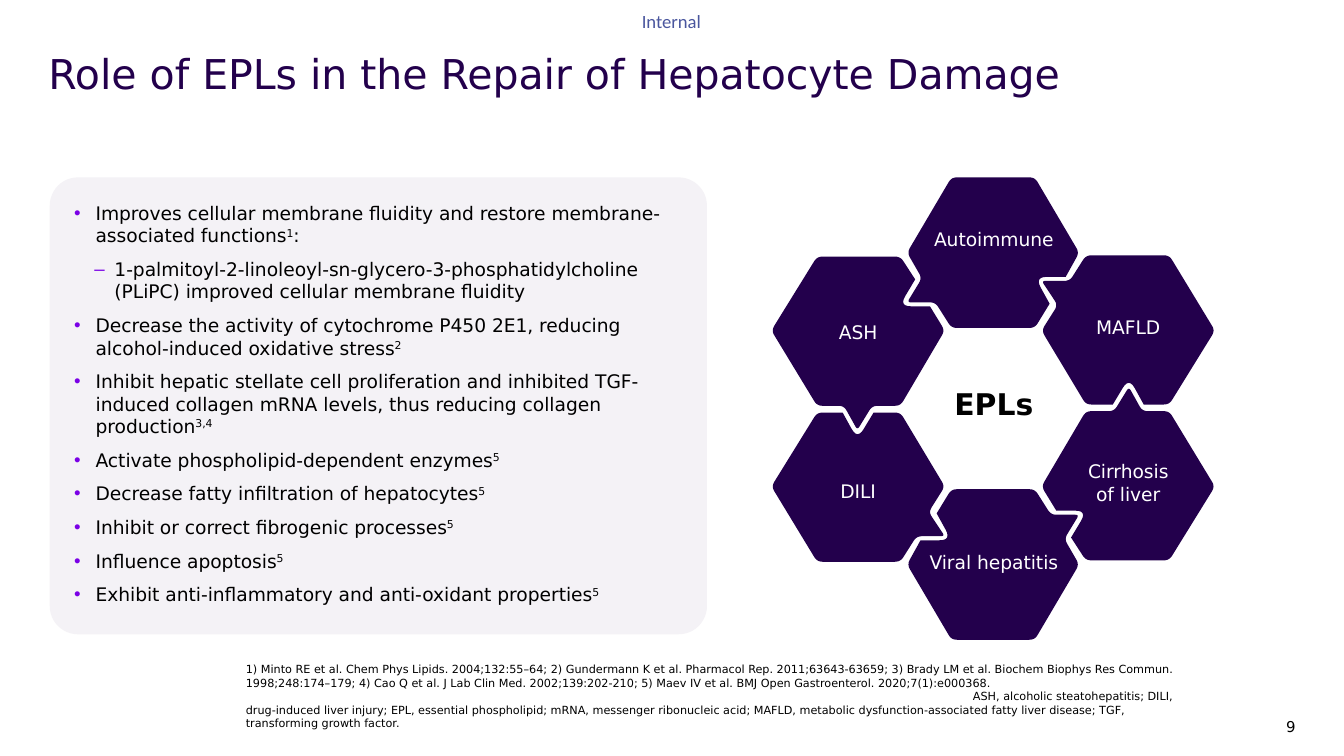
from lxml import etree
from pptx import Presentation
from pptx.dml.color import RGBColor
from pptx.enum.text import MSO_ANCHOR, MSO_AUTO_SIZE, PP_ALIGN
from pptx.oxml.ns import qn
from pptx.util import Pt

PX = 9144  # 100 px to the inch
SLIDE_WIDTH = 1000 * PX
SLIDE_HEIGHT = SLIDE_WIDTH * 9 // 16
TOP, MIDDLE, BOTTOM = MSO_ANCHOR.TOP, MSO_ANCHOR.MIDDLE, MSO_ANCHOR.BOTTOM
LEFT, CENTER, RIGHT = PP_ALIGN.LEFT, PP_ALIGN.CENTER, PP_ALIGN.RIGHT

THEME = {
    "font": "DejaVu Sans", "marking_font": "Calibri",
    "purple": "23004C", "panel": "F4F2F6", "bullet": "7A00E6",
    "black": "000000", "white": "FFFFFF", "marking": "4A569E",
    "title_size": 22, "hub_size": 16, "body_size": 10, "number_size": 8, "note_size": 6,
}

TITLE = "Role of EPLs in the Repair of Hepatocyte Damage"
MARKING = "Internal"
PAGE_NUMBER = "9"
HUB = "EPLs"

# level, text, reference mark, text after the mark
EFFECTS = [
    (0, "Improves cellular membrane fluidity and restore membrane-associated functions", "1", ":"),
    (1, "1-palmitoyl-2-linoleoyl-sn-glycero-3-phosphatidylcholine (PLiPC) improved cellular "
        "membrane fluidity", "", ""),
    (0, "Decrease the activity of cytochrome P450 2E1, reducing alcohol-induced oxidative stress",
     "2", ""),
    (0, "Inhibit hepatic stellate cell proliferation and inhibited TGF-induced collagen mRNA "
        "levels, thus reducing collagen production", "3,4", ""),
    (0, "Activate phospholipid-dependent enzymes", "5", ""),
    (0, "Decrease fatty infiltration of hepatocytes", "5", ""),
    (0, "Inhibit or correct fibrogenic processes", "5", ""),
    (0, "Influence apoptosis", "5", ""),
    (0, "Exhibit anti-inflammatory and anti-oxidant properties", "5", ""),
]
BULLETS = [("•", 16, -16), ("–", 30, -15)]  # character, margin, indent by level

# first-line indent, text
NOTES = [
    (0, "1) Minto RE et al. Chem Phys Lipids. 2004;132:55–64; 2) Gundermann K et al. Pharmacol "
        "Rep. 2011;63643-63659; 3) Brady LM et al. Biochem Biophys Res Commun. 1998;248:174–179; "
        "4) Cao Q et al. J Lab Clin Med. 2002;139:202-210; 5) Maev IV et al. BMJ Open "
        "Gastroenterol. 2020;7(1):e000368."),
    (541, "ASH, alcoholic steatohepatitis; DILI, drug-induced liver injury; EPL, essential "
          "phospholipid; mRNA, messenger ribonucleic acid; MAFLD, metabolic "
          "dysfunction-associated fatty liver disease; TGF, transforming growth factor."),
]

# Corners of three pieces: x, y, rounding; the other three are these turned half round.
TURN_X, TURN_Y = 1478, 608  # sums of opposite coordinates
PIECES = [
    [(708, 132, 4), (675, 188, 4), (686, 207, 4), (675, 225, 3), (696, 225, 4), (708, 244, 4),
     (770, 244, 4), (781, 226, 0), (770, 206, 9), (793, 206, 0), (803, 188, 4), (770, 132, 4)],
    [(608, 191, 4), (574, 246, 4), (608, 302, 4), (628, 302, 4), (638, 320, 3), (649, 302, 4),
     (670, 302, 4), (703, 246, 4), (692, 228, 0), (669, 228, 9), (681, 208, 0), (670, 191, 4)],
    [(608, 307, 4), (574, 362, 4), (608, 418, 4), (670, 418, 4), (682, 399, 4), (703, 399, 3),
     (691, 381, 4), (703, 362, 4), (670, 307, 4), (650, 307, 0), (638, 327, 9), (627, 307, 0)],
]
LABEL_WIDTH, LABEL_HEIGHT = 117, 32
LABEL_COLUMNS = (580, 681, 781)
# column, top, lines
LABELS = [
    (1, 162, ["Autoimmune"]), (0, 231, ["ASH"]), (0, 349, ["DILI"]),
    (1, 402, ["Viral hepatitis"]), (2, 343, ["Cirrhosis", "of liver"]), (2, 227, ["MAFLD"]),
]


def color(name):
    return RGBColor.from_string(THEME[name])


def place(shape, left, top, width, height):
    shape.left, shape.top, shape.width, shape.height = (
        value * PX for value in (left, top, width, height))


def prepare(frame, anchor, inset=0):
    frame.word_wrap = True
    frame.auto_size = MSO_AUTO_SIZE.NONE
    frame.vertical_anchor = anchor
    frame.margin_left = frame.margin_right = inset * PX
    frame.margin_top = frame.margin_bottom = inset * PX


def add_run(paragraph, text, size="body_size", ink="black", font="font"):
    run = paragraph.add_run()
    run.text = text
    run.font.name = THEME[font]
    run.font.size = Pt(THEME[size])
    run.font.color.rgb = color(ink)
    return run


def add_text(slide, box, lines, anchor=TOP, align=LEFT, **style):
    """Add one paragraph, with a line break between its lines."""
    shape = slide.shapes.add_textbox(*(value * PX for value in box))
    prepare(shape.text_frame, anchor)
    paragraph = shape.text_frame.paragraphs[0]
    paragraph.alignment = align
    for index, line in enumerate(lines):
        if index:
            paragraph.add_line_break()
        run = add_run(paragraph, line, **style)
    return run


def next_paragraph(frame, index):
    return frame.add_paragraph() if index else frame.paragraphs[0]


def set_bullet(paragraph, level):
    character, margin, indent = BULLETS[level]
    properties = paragraph._p.get_or_add_pPr()
    properties.set("marL", str(margin * PX))
    properties.set("indent", str(indent * PX))
    bullet_color = etree.SubElement(properties, qn("a:buClr"))
    etree.SubElement(bullet_color, qn("a:srgbClr"), val=THEME["bullet"])
    etree.SubElement(properties, qn("a:buChar"), char=character)


def fill_panel(panel):
    place(panel, 37, 132, 489, 340)
    geometry = etree.SubElement(panel.element.spPr, qn("a:prstGeom"), prst="roundRect")
    guides = etree.SubElement(geometry, qn("a:avLst"))
    etree.SubElement(guides, qn("a:gd"), name="adj", fmla="val 6200")
    panel.fill.solid()
    panel.fill.fore_color.rgb = color("panel")
    frame = panel.text_frame
    prepare(frame, TOP, 12)
    for index, (level, text, mark, tail) in enumerate(EFFECTS):
        paragraph = next_paragraph(frame, index)
        set_bullet(paragraph, level)
        paragraph.level = level
        paragraph.space_before = Pt(6 if index else 0)
        add_run(paragraph, text)
        if mark:
            add_run(paragraph, mark).font._element.set("baseline", "30000")
        if tail:
            add_run(paragraph, tail)


def toward(start, end, distance):
    dx, dy = end[0] - start[0], end[1] - start[1]
    ratio = distance / (dx * dx + dy * dy) ** 0.5
    return start[0] + dx * ratio, start[1] + dy * ratio


def round_corners(corners, steps=6):
    """Return outline points in EMU, each corner replaced by a quadratic curve."""
    points = []
    for index, (x, y, cut) in enumerate(corners):
        before = toward((x, y), corners[index - 1], cut)
        after = toward((x, y), corners[(index + 1) % len(corners)], cut)
        for step in range(steps + 1 if cut else 1):
            t = step / steps
            points.append(tuple(
                round(PX * ((1 - t) ** 2 * a + 2 * t * (1 - t) * b + t * t * c))
                for a, b, c in zip(before, (x, y), after)))
    return points


def add_piece(slide, corners):
    points = round_corners(corners)
    builder = slide.shapes.build_freeform(*points[0])
    builder.add_line_segments(points[1:], close=True)
    piece = builder.convert_to_shape()
    piece.shadow.inherit = False
    piece.fill.solid()
    piece.fill.fore_color.rgb = color("purple")
    piece.line.fill.background()


def main():
    presentation = Presentation()
    presentation.slide_width, presentation.slide_height = SLIDE_WIDTH, SLIDE_HEIGHT
    slide = presentation.slides.add_slide(presentation.slide_layouts[1])

    title = slide.shapes.title
    place(title, 36, 40, 928, 79)
    prepare(title.text_frame, TOP)
    heading = title.text_frame.paragraphs[0]
    heading.alignment = LEFT
    heading.line_spacing = 0.9
    add_run(heading, TITLE, "title_size", "purple")
    fill_panel(slide.placeholders[1])

    add_text(slide, (476, 7, 47, 17), [MARKING], align=CENTER,
             ink="marking", font="marking_font")
    add_text(slide, (912, 524, 52, 23), [PAGE_NUMBER], BOTTOM, RIGHT, size="number_size")

    notes = slide.shapes.add_textbox(183 * PX, 498 * PX, 703 * PX, 45 * PX).text_frame
    prepare(notes, BOTTOM)
    for index, (indent, text) in enumerate(NOTES):
        paragraph = next_paragraph(notes, index)
        paragraph._p.get_or_add_pPr().set("indent", str(indent * PX))
        add_run(paragraph, text, "note_size")

    for corners in PIECES:
        add_piece(slide, corners)
        add_piece(slide, [(TURN_X - x, TURN_Y - y, cut) for x, y, cut in corners])
    for column, top, lines in LABELS:
        add_text(slide, (LABEL_COLUMNS[column], top, LABEL_WIDTH, LABEL_HEIGHT), lines,
                 MIDDLE, CENTER, ink="white")
    hub = add_text(slide, (LABEL_COLUMNS[1], 284, LABEL_WIDTH, LABEL_HEIGHT), [HUB],
                   MIDDLE, CENTER, size="hub_size")
    hub.font.bold = True

    presentation.save("out.pptx")


if __name__ == "__main__":
    main()
